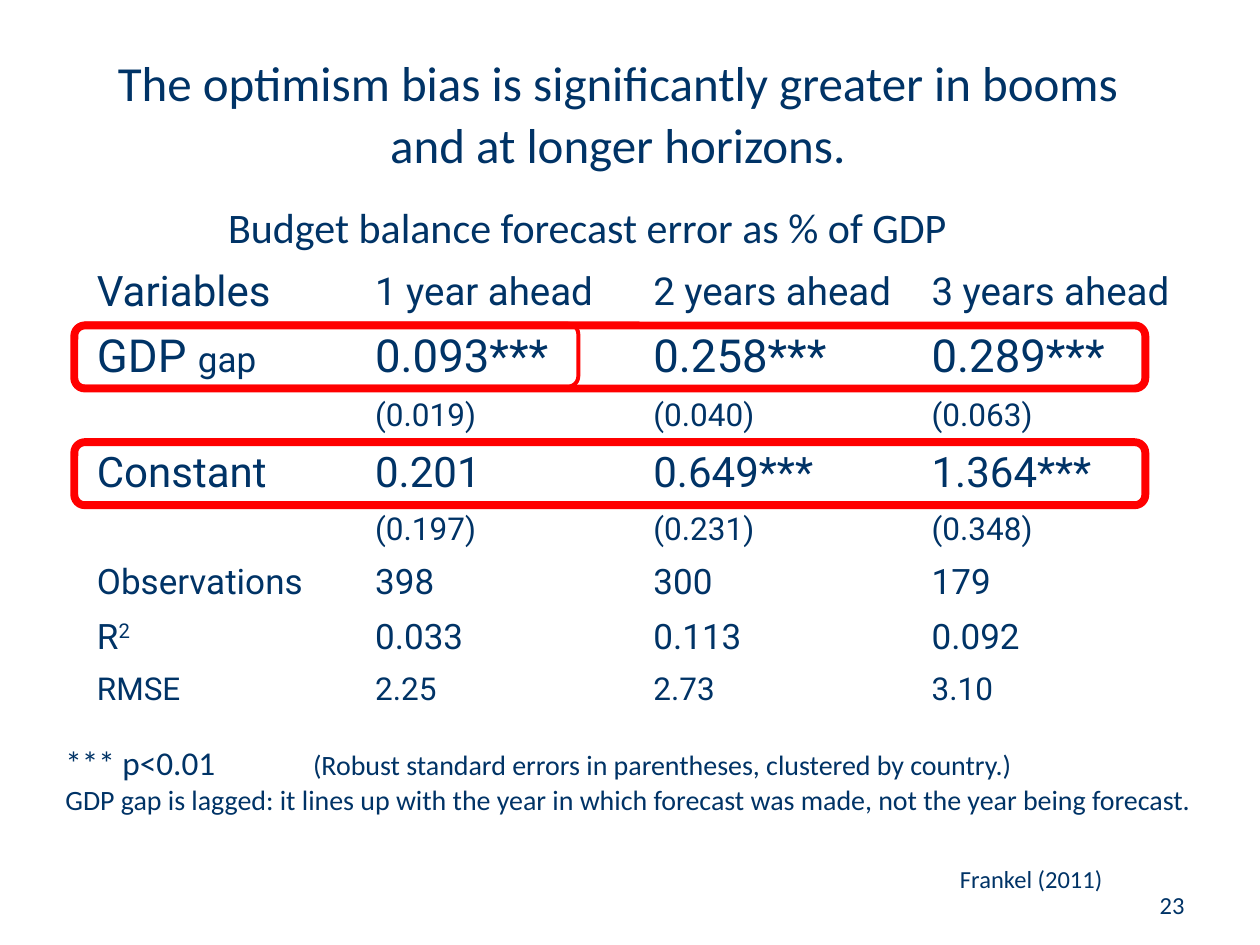
from lxml.etree import SubElement
from pptx import Presentation
from pptx.dml.color import RGBColor
from pptx.enum.shapes import MSO_SHAPE as Kind
from pptx.enum.text import MSO_ANCHOR as Anchor, PP_ALIGN as Align
from pptx.oxml.ns import qn
from pptx.util import Pt

# Content: a run is (text, size) or (text, size, baseline)
TITLE = ["The optimism bias is significantly greater in booms",
         "and at longer horizons."]
CAPTION = [[("Budget balance forecast error as % of GDP", 24)]]
NOTES = [[("*** p<0.01\t", 19),
          ("(Robust standard errors in parentheses, clustered by country.)", 16)],
         [("GDP gap is lagged: it lines up with the year in which forecast "
           "was made, not the year being forecast.", 16)]]
CREDIT = [[("Frankel (2011)", 14)]]
NUMBER = [[("23", 14)]]

# Table rows: height, label runs, value size, values
ROWS = [
    (36, [("Variables", 24)], 22, ["1 year ahead", "2 years ahead", "3 years ahead"]),
    (38.2, [("GDP ", 26), ("gap", 20)], 26, ["0.093***", "0.258***", "0.289***"]),
    (28.8, [], 18, ["(0.019)", "(0.040)", "(0.063)"]),
    (36, [("Constant", 24)], 24, ["0.201", "0.649***", "1.364***"]),
    (28.8, [], 18, ["(0.197)", "(0.231)", "(0.348)"]),
    (31, [("Observations", 20)], 20, ["398", "300", "179"]),
    (31, [("R", 20), ("2", 20, 30000)], 20, ["0.033", "0.113", "0.092"]),
    (28.8, [("RMSE", 18)], 18, ["2.25", "2.73", "3.10"]),
]
# Red frames: top, width, line weight
FRAMES = [(252, 612, 2.25), (186, 612, 4.5), (185, 288, 2.25), (252.7, 612, 4.5)]
INK, RED, WHITE = "003366", "FF0000", "FFFFFF"


def color(code):
    return RGBColor.from_string(code)


def style(obj, vals):
    for key, val in vals.items():
        setattr(obj, key, val)


def write(frame, lines, face="Calibri", align=Align.LEFT):
    for i, line in enumerate(lines):
        para = frame.paragraphs[0] if i == 0 else frame.add_paragraph()
        para.alignment = align
        for text, size, *base in line:
            run = para.add_run()
            run.text = text
            style(run.font, {"name": face, "size": Pt(size), "bold": False})
            run.font.color.rgb = color(INK)
            if base:
                run._r.get_or_add_rPr().set("baseline", str(base[0]))


def label(box, lines, pad=None, anchor=Anchor.TOP, align=Align.LEFT):
    item = slide.shapes.add_textbox(*map(Pt, box))
    frame = item.text_frame
    style(frame, {"word_wrap": True, "vertical_anchor": anchor})
    if pad is not None:
        sides = ("left", "right", "top", "bottom")
        style(frame, {f"margin_{side}": Pt(pad) for side in sides})
        item.fill.solid()
        item.fill.fore_color.rgb = color(WHITE)
    write(frame, lines, align=align)
    return frame


deck = Presentation()
style(deck, {"slide_width": Pt(720), "slide_height": Pt(540)})
slide = deck.slides.add_slide(deck.slide_layouts[5])

# Title
title = slide.shapes.title
style(title, dict(zip(("left", "top", "width", "height"), map(Pt, (56, 24.5, 594, 78)))))
style(title.text_frame, {"word_wrap": True, "vertical_anchor": Anchor.TOP})
write(title.text_frame, [[(text, 28)] for text in TITLE], align=Align.CENTER)
for para in title.text_frame.paragraphs:
    style(para, {"line_spacing": Pt(35.5), "space_before": Pt(0)})

# Regression table
table = slide.shapes.add_table(len(ROWS), 4, Pt(48.2), Pt(149), Pt(636), Pt(259)).table
style(table, {"first_row": False, "horz_banding": False})
for col in table.columns:
    col.width = Pt(159)
for r, (height, head, size, vals) in enumerate(ROWS):
    table.rows[r].height = Pt(height)
    for c, runs in enumerate([head] + [[(val, size)] for val in vals]):
        cell = table.cell(r, c)
        cell.fill.background()
        cell.vertical_anchor = Anchor.MIDDLE
        write(cell.text_frame, [runs], "Roboto")

# Caption, notes, credit and page number
label((129.6, 114.5, 474.5, 30), CAPTION, 0.7, Anchor.MIDDLE)
notes = label((36.7, 423.4, 657.4, 44), NOTES, 0.7, Anchor.MIDDLE)
tabs = SubElement(notes.paragraphs[0]._p.get_or_add_pPr(), qn("a:tabLst"))
SubElement(tabs, qn("a:tab"), pos=str(Pt(141.5)), algn="l")
label((541.5, 490.3, 108, 28.8), CREDIT)
label((516.2, 491.8, 167.8, 37.4), NUMBER, anchor=Anchor.BOTTOM, align=Align.RIGHT)

# Red frames around the key rows
for top, width, weight in FRAMES:
    ring = slide.shapes.add_shape(Kind.ROUNDED_RECTANGLE, Pt(42.5), Pt(top), Pt(width), Pt(36))
    ring.shadow.inherit = False
    ring.fill.background()
    ring.line.color.rgb = color(RED)
    ring.line.width = Pt(weight)

deck.save("out.pptx")
